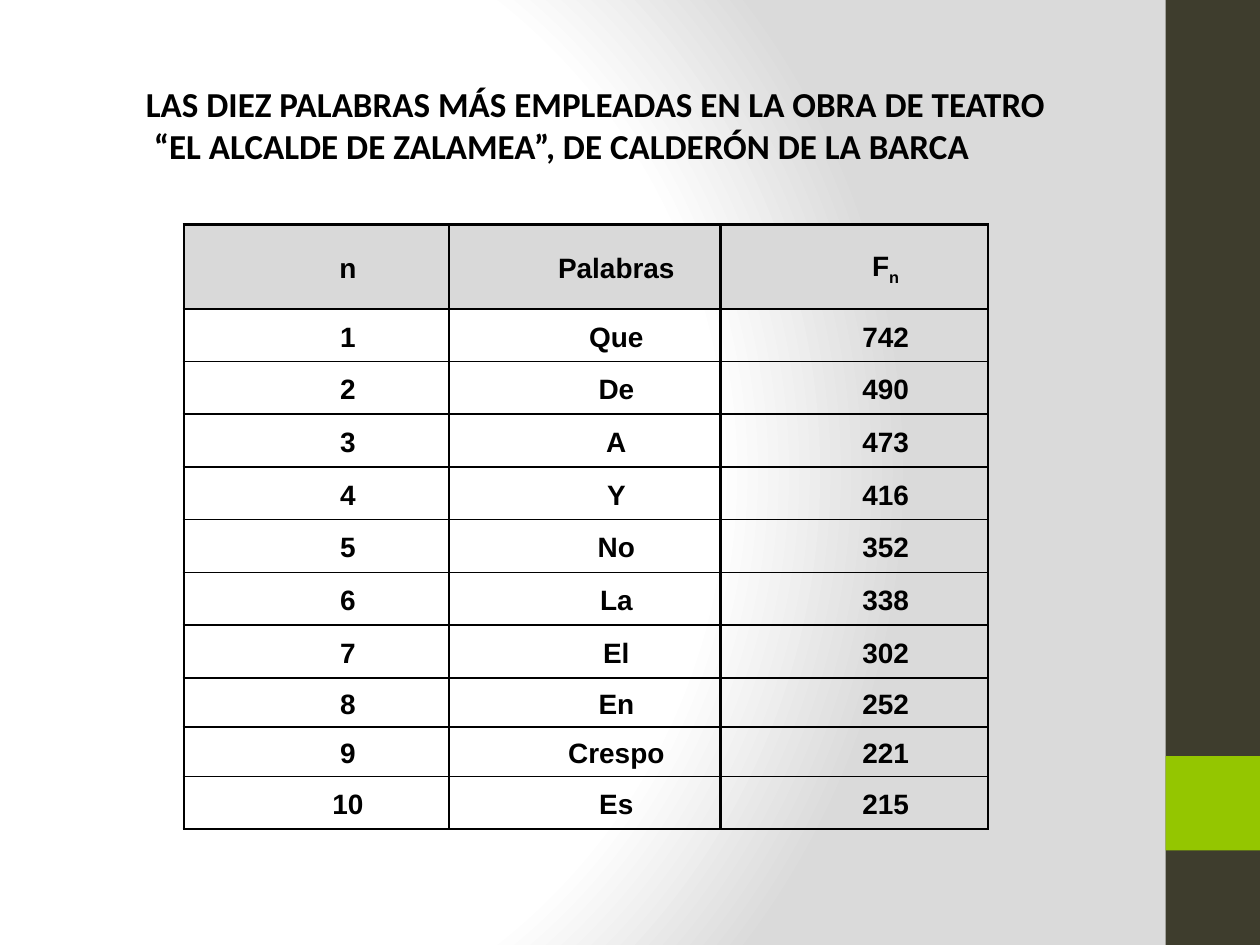
from dataclasses import dataclass

from pptx import Presentation
from pptx.dml.color import RGBColor
from pptx.enum.shapes import MSO_SHAPE as Shape
from pptx.enum.text import MSO_ANCHOR as Anchor, PP_ALIGN as Align
from pptx.oxml import parse_xml
from pptx.oxml.ns import nsdecls
from pptx.util import Pt


@dataclass(frozen=True)
class Theme:
    ink: str = "000000"
    paper: str = "FFFFFF"
    shade: str = "DADADA"
    header: str = "D9D9D9"
    dark: str = "3E3D2D"
    accent: str = "94C600"
    title_font: str = "Calibri"
    table_font: str = "Arial"
    title_size: float = 20
    table_size: float = 16
    thick: float = 1.5
    thin: float = 1


@dataclass(frozen=True)
class Block:
    left: float
    top: float
    width: float
    height: float
    color: str


@dataclass(frozen=True)
class Word:
    text: str
    frequency: int


THEME = Theme()
BLOCKS = [Block(666, 0, 54, 540, THEME.dark), Block(666, 432, 54, 54, THEME.accent)]
TITLE = [
    "LAS DIEZ PALABRAS MÁS EMPLEADAS EN LA OBRA DE TEATRO",
    " “EL ALCALDE DE ZALAMEA”, DE CALDERÓN DE LA BARCA",
]
WORDS = [
    Word("Que", 742), Word("De", 490), Word("A", 473), Word("Y", 416), Word("No", 352),
    Word("La", 338), Word("El", 302), Word("En", 252), Word("Crespo", 221), Word("Es", 215),
]
COLUMNS = [151.6, 155.2, 152.6]
ROWS = [48.2] + [30.15] * 7 + [28.15] * 2 + [30.15]
INDENT = 36


def add_text(p, text: str, *, font: str, size: float, color: str = THEME.ink,
             bold: bool = True, baseline: int = 0) -> None:
    r = p.add_run()
    r.text = text
    r.font.name, r.font.size, r.font.bold = font, Pt(size), bold
    r.font.color.rgb = RGBColor.from_string(color)
    if baseline:
        r.font._element.set("baseline", str(baseline * 1000))


def paint_background(s) -> None:
    fill = s.background.fill
    fill.gradient()
    old = s.element.xpath("./p:cSld/p:bg/p:bgPr/a:gradFill")[0]
    stops = "".join(
        f'<a:gs pos="{pos * 1000}"><a:srgbClr val="{color}"/></a:gs>'
        for pos, color in [(0, THEME.paper), (75, THEME.paper), (100, THEME.shade)])
    old.getparent().replace(old, parse_xml(
        f'<a:gradFill {nsdecls("a")} rotWithShape="1"><a:gsLst>{stops}</a:gsLst>'
        '<a:path path="circle"><a:fillToRect l="20000" t="50000" r="100000" b="50000"/>'
        '</a:path></a:gradFill>'))


def add_block(s, block: Block) -> None:
    sp = s.shapes.add_shape(Shape.RECTANGLE, Pt(block.left), Pt(block.top),
                            Pt(block.width), Pt(block.height))
    sp.shadow.inherit = False
    sp.fill.solid()
    sp.fill.fore_color.rgb = RGBColor.from_string(block.color)
    sp.line.fill.background()


def add_title(s) -> None:
    tf = s.shapes.add_textbox(Pt(76.3), Pt(43.2), Pt(572.4), Pt(77.8)).text_frame
    tf.word_wrap = True
    tf.vertical_anchor = Anchor.MIDDLE
    tf.margin_bottom = Pt(25.6)
    for i, line in enumerate(TITLE):
        p = tf.add_paragraph() if i else tf.paragraphs[0]
        add_text(p, line, font=THEME.title_font, size=THEME.title_size)


def set_borders(cell, top: float, bottom: float) -> None:
    sides = {"L": THEME.thick, "R": THEME.thick, "T": top, "B": bottom}
    tcPr = cell._tc.get_or_add_tcPr()
    for i, (side, width) in enumerate(sides.items()):
        tcPr.insert(i, parse_xml(
            f'<a:ln{side} {nsdecls("a")} w="{Pt(width)}"><a:solidFill>'
            f'<a:srgbClr val="{THEME.ink}"/></a:solidFill></a:ln{side}>'))


def fill_cell(cell, text: str, subscript: str = "", color: str = "") -> None:
    cell.vertical_anchor = Anchor.MIDDLE
    cell.margin_left = cell.margin_right = Pt(5)
    cell.margin_top = cell.margin_bottom = 0
    if color:
        cell.fill.solid()
        cell.fill.fore_color.rgb = RGBColor.from_string(color)
    else:
        cell.fill.background()
    p = cell.text_frame.paragraphs[0]
    p.alignment, p.line_spacing = Align.CENTER, 1.15
    p._p.get_or_add_pPr().set("marL", str(Pt(INDENT)))
    add_text(p, text, font=THEME.table_font, size=THEME.table_size)
    if subscript:
        add_text(p, subscript, font=THEME.table_font, size=THEME.table_size, baseline=-25)


def add_word_table(s) -> None:
    table = s.shapes.add_table(len(ROWS), len(COLUMNS), Pt(105), Pt(128.2),
                               Pt(sum(COLUMNS)), Pt(sum(ROWS))).table
    table.first_row = table.horz_banding = False
    for column, width in zip(table.columns, COLUMNS):
        column.width = Pt(width)
    for row, height in zip(table.rows, ROWS):
        row.height = Pt(height)

    # Header row, then one row per ranked word
    header = [("n", ""), ("Palabras", ""), ("F", "n")]
    for cell, (text, subscript) in zip(table.rows[0].cells, header):
        fill_cell(cell, text, subscript, THEME.header)
        set_borders(cell, THEME.thick, THEME.thick)
    for rank, word in enumerate(WORDS, 1):
        top = THEME.thick if rank == 1 else THEME.thin
        bottom = THEME.thick if rank == len(WORDS) else THEME.thin
        values = (rank, word.text, word.frequency)
        for cell, value in zip(table.rows[rank].cells, values):
            fill_cell(cell, str(value))
            set_borders(cell, top, bottom)


def main() -> None:
    prs = Presentation()
    prs.slide_width, prs.slide_height = Pt(720), Pt(540)
    s = prs.slides.add_slide(prs.slide_layouts[6])
    paint_background(s)
    # Side band and accent square
    for block in BLOCKS:
        add_block(s, block)
    add_title(s)
    add_word_table(s)
    prs.save("out.pptx")


if __name__ == "__main__":
    main()
